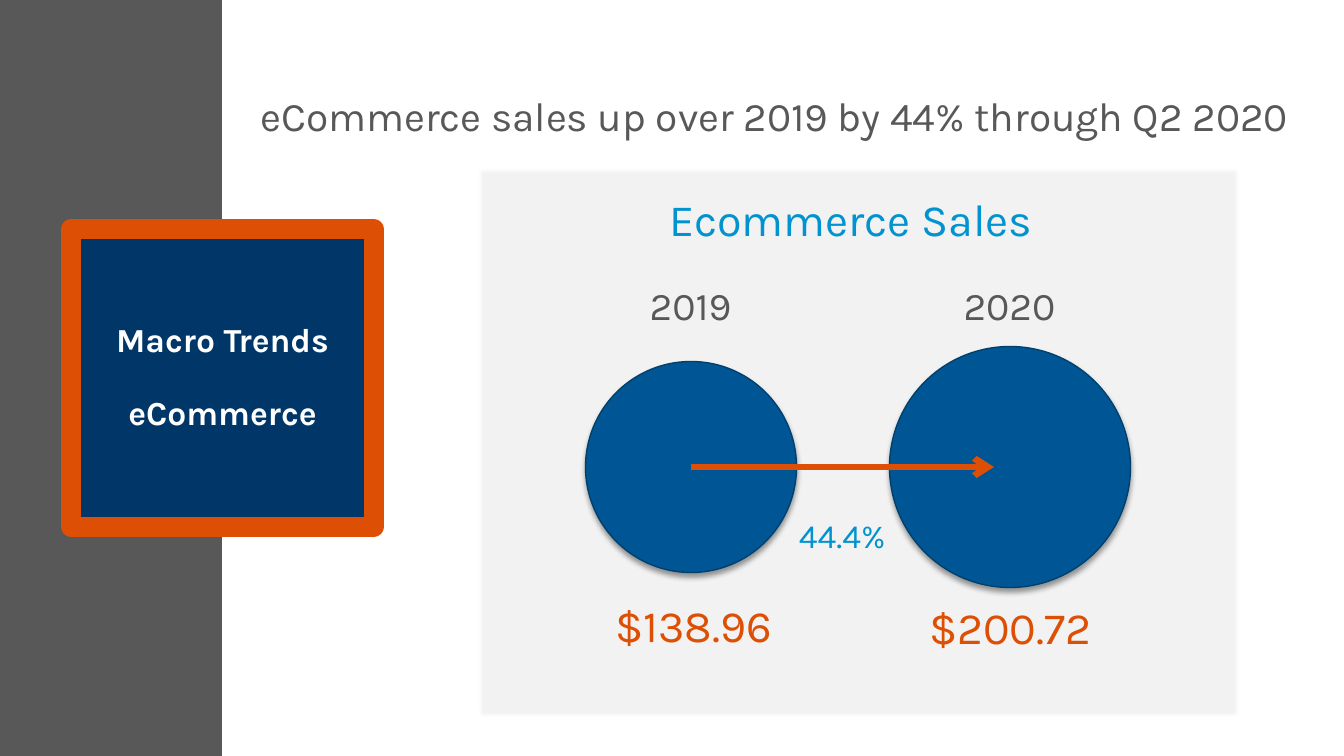
from lxml import etree
from pptx import Presentation
from pptx.dml.color import RGBColor
from pptx.enum.shapes import MSO_CONNECTOR, MSO_SHAPE as Preset
from pptx.enum.text import MSO_ANCHOR as Anchor, PP_ALIGN as Align
from pptx.oxml.ns import qn
from pptx.util import Emu, Pt

EMU_PER_PX = 914400 / 100.8
SLIDE_WIDTH, SLIDE_HEIGHT = 1344, 756
FONT = "Karla"
COLORS = {
    "backdrop": "E7E6E6",
    "white": "FFFFFF",
    "gray": "585858",
    "panel": "F2F2F2",
    "navy": "003768",
    "blue": "005694",
    "outline": "00406D",
    "sky": "0093D0",
    "orange": "DD4F05",
    "shadow": "000000",
}
# year, sales, circle center x, diameter, label left, sales left, sales top
YEARS = [
    ("2019", "$138.96", 691, 211, 570, 573, 593),
    ("2020", "$200.72", 1010, 241, 889, 890, 595),
]
CIRCLE_CENTER_Y = 467
LABEL_WIDTH = 241


def px(length):
    return Emu(round(length * EMU_PER_PX))


def color(name):
    return RGBColor.from_string(COLORS[name])


def add_xml(parent, tag, **attributes):
    child = etree.SubElement(parent, qn(tag))
    for name, value in attributes.items():
        child.set(name, str(value))
    return child


def add_block(slide, box, fill, preset=Preset.RECTANGLE, line=None, width=0):
    shape = slide.shapes.add_shape(preset, *map(px, box))
    shape.fill.solid()
    shape.fill.fore_color.rgb = color(fill)
    if line:
        shape.line.color.rgb = color(line)
        shape.line.width = Pt(width)
    else:
        shape.line.fill.background()
    shape.shadow.inherit = False
    return shape


def effects_of(shape):
    return shape.element.spPr.find(qn("a:effectLst"))


def write(shape, lines, size, ink, bold=False, **paragraph_format):
    """Fill a shape with one paragraph per line, all in the same format."""
    frame = shape.text_frame
    frame.word_wrap = True
    for index, line in enumerate(lines):
        paragraph = frame.add_paragraph() if index else frame.paragraphs[0]
        for name, value in paragraph_format.items():
            setattr(paragraph, name, value)
        run = paragraph.add_run()
        run.text = line
        run.font.color.rgb = color(ink)
        font_format = {"name": FONT, "size": Pt(size), "bold": bold}
        for name, value in font_format.items():
            setattr(run.font, name, value)
    return frame


def add_label(slide, box, text, size, ink, alignment=Align.CENTER, **paragraph_format):
    label = slide.shapes.add_textbox(*map(px, box))
    return write(label, [text], size, ink, alignment=alignment, **paragraph_format)


def add_title_block(slide):
    block = add_block(slide, (71, 229, 303, 298), "navy", line="orange", width=13.75)
    add_xml(block.line._get_or_add_ln(), "a:round")
    frame = write(block, ["Macro Trends", "eCommerce"], 24, "white", bold=True,
                  alignment=Align.CENTER, line_spacing=0.9)
    frame.vertical_anchor = Anchor.MIDDLE
    frame.paragraphs[1].space_before = Pt(26)


def add_heading(slide):
    frame = add_label(slide, (248, 37, 1054, 118),
                      "eCommerce sales up over 2019 by 44% through Q2 2020", 29, "gray",
                      line_spacing=2.0, space_before=Pt(10))
    frame.margin_left = frame.margin_right = 0


def add_panel(slide):
    panel = add_block(slide, (478, 168, 763, 551), "panel")
    add_xml(effects_of(panel), "a:softEdge", rad=Pt(2.5))


def add_circle(slide, center_x, diameter):
    box = (center_x - diameter / 2, CIRCLE_CENTER_Y - diameter / 2, diameter, diameter)
    circle = add_block(slide, box, "blue", Preset.FLOWCHART_CONNECTOR, "outline", 1)
    shadow = add_xml(effects_of(circle), "a:outerShdw", blurRad=Pt(4), dist=Pt(3),
                     dir=5400000, rotWithShape=0)
    shade = add_xml(shadow, "a:srgbClr", val=COLORS["shadow"])
    add_xml(shade, "a:alpha", val=40000)


def add_arrow(slide, start_x, end_x, y):
    arrow = slide.shapes.add_connector(
        MSO_CONNECTOR.STRAIGHT, px(start_x), px(y), px(end_x), px(y))
    arrow.line.color.rgb = color("orange")
    arrow.line.width = Pt(4.5)
    add_xml(arrow.line._get_or_add_ln(), "a:tailEnd", type="arrow")
    add_xml(arrow.element.spPr, "a:effectLst")


def main():
    presentation = Presentation()
    presentation.slide_width = px(SLIDE_WIDTH)
    presentation.slide_height = px(SLIDE_HEIGHT)
    slide = presentation.slides.add_slide(presentation.slide_layouts[6])
    slide.background.fill.solid()
    slide.background.fill.fore_color.rgb = color("backdrop")

    add_block(slide, (0, 0, SLIDE_WIDTH, SLIDE_HEIGHT), "white")
    add_block(slide, (0, 0, 222, SLIDE_HEIGHT), "gray")
    add_title_block(slide)
    add_heading(slide)
    add_panel(slide)

    for _, _, center_x, diameter, *_ in YEARS:
        add_circle(slide, center_x, diameter)
    add_arrow(slide, 691, 994, CIRCLE_CENTER_Y)

    for year, sales, _, _, label_left, sales_left, sales_top in YEARS:
        add_label(slide, (label_left, 276, LABEL_WIDTH, 69), year, 28, "gray")
        add_label(slide, (sales_left, sales_top, LABEL_WIDTH, 77), sales, 32, "orange")
    add_label(slide, (789, 510, 140, 60), "44.4%", 24, "sky", Align.LEFT)
    add_label(slide, (578, 187, 546, 77), "Ecommerce Sales", 32, "sky")

    presentation.save("out.pptx")


if __name__ == "__main__":
    main()
